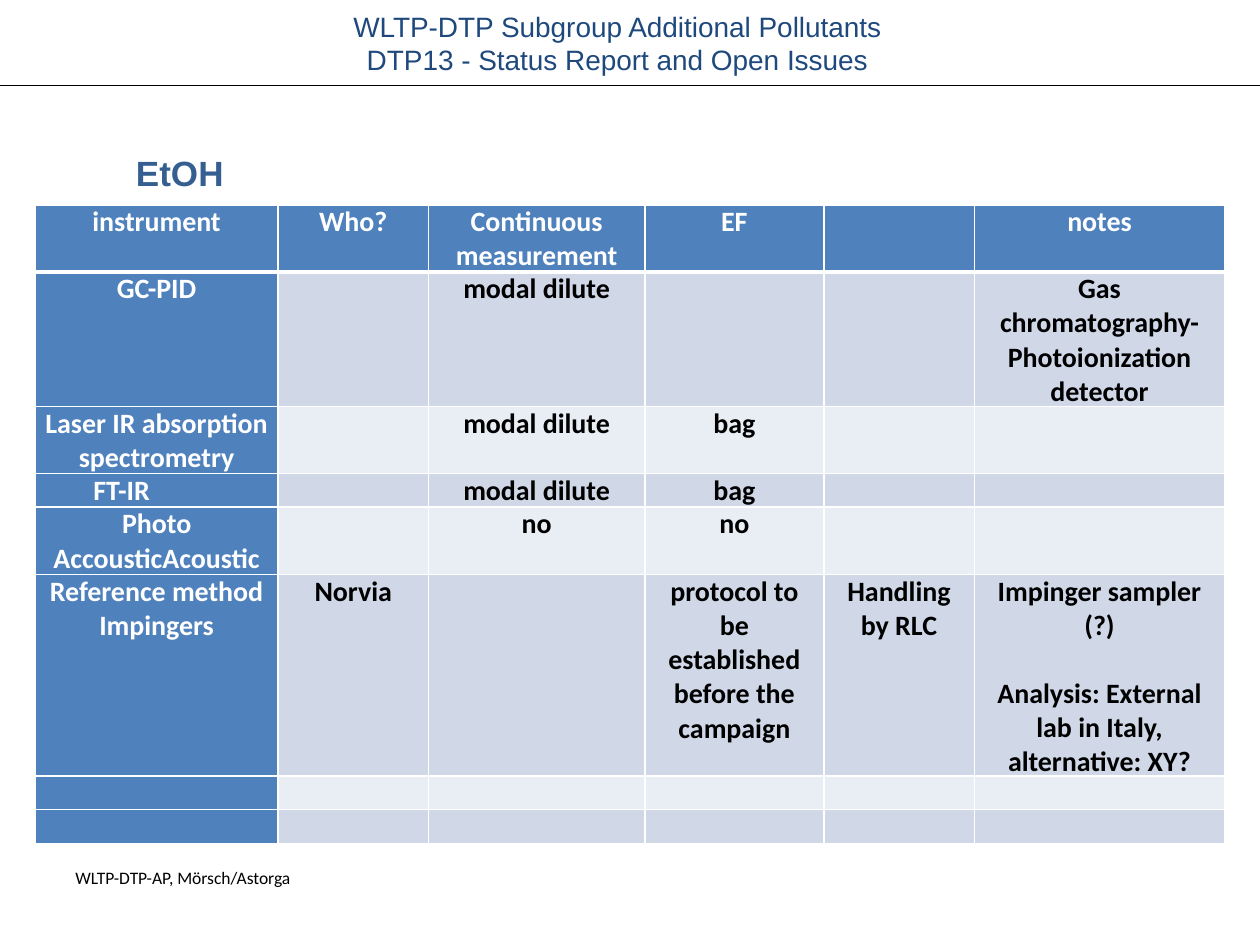
from dataclasses import dataclass

from lxml import etree
from pptx import Presentation
from pptx.dml.color import RGBColor
from pptx.enum.shapes import MSO_CONNECTOR
from pptx.enum.text import MSO_ANCHOR, PP_ALIGN
from pptx.oxml.ns import qn
from pptx.slide import Slide
from pptx.util import Pt

LEFT, CENTER = PP_ALIGN.LEFT, PP_ALIGN.CENTER
TOP, MIDDLE = MSO_ANCHOR.TOP, MSO_ANCHOR.MIDDLE
STRAIGHT = MSO_CONNECTOR.STRAIGHT

COLORS = {
    "black": "000000",
    "white": "FFFFFF",
    "title": "1F497D",
    "heading": "365F91",
    "header": "4F81BD",
    "dark_band": "D0D8E8",
    "light_band": "E9EDF4",
}
COLUMN_WIDTHS = [139, 85.8, 123.8, 102.2, 86, 143.2]
ROW_LINES = [2, 4, 2, 1, 2, 6, 1, 1]
LINE_HEIGHT = 19.2
TAB_SPACE = 40
INSTRUMENTS = [
    ["instrument", "Who?", "Continuous measurement", "EF", "", "notes"],
    ["GC-PID", "", "modal dilute", "", "",
     "Gas chromatography-Photoionization detector"],
    ["Laser IR absorption spectrometry", "", "modal dilute", "bag", "", ""],
    ["FT-IR", "", "modal dilute", "bag", "", ""],
    ["Photo AccousticAcoustic", "", "no", "no", "", ""],
    ["Reference method\nImpingers", "Norvia", "",
     "protocol to be established before the campaign", "Handling by RLC",
     "Impinger sampler (?)\nAnalysis: External lab in Italy, alternative: XY?"],
    [""] * 6,
    [""] * 6,
]


@dataclass
class Report:
    slide: Slide
    body_font: str = "Calibri"
    title_font: str = "Arial"
    body_size: float = 16

    def style(self, paragraph, font, size, color, bold, align):
        paragraph.alignment = align
        paragraph.font.name = font
        paragraph.font.size = Pt(size)
        paragraph.font.bold = bold
        paragraph.font.color.rgb = RGBColor.from_string(COLORS[color])

    def text(self, content, box, font, size, color,
             bold=False, align=LEFT, anchor=TOP):
        frame = self.slide.shapes.add_textbox(*map(Pt, box)).text_frame
        frame.word_wrap = True
        frame.vertical_anchor = anchor
        frame.text = content
        for paragraph in frame.paragraphs:
            self.style(paragraph, font, size, color, bold, align)

    def rule(self, y, width):
        rule = self.slide.shapes.add_connector(STRAIGHT, 0, Pt(y), Pt(width), Pt(y))
        rule.line.width = Pt(0.75)
        rule.line.color.rgb = RGBColor.from_string(COLORS["black"])
        etree.SubElement(rule._element.spPr, qn("a:effectLst"))

    def borders(self, cell, bottom):
        properties = cell._tc.get_or_add_tcPr()
        for index, side in enumerate(("lnL", "lnR", "lnT", "lnB")):
            width = bottom if side == "lnB" else 1
            border = etree.Element(qn(f"a:{side}"), w=str(Pt(width)))
            fill = etree.SubElement(border, qn("a:solidFill"))
            etree.SubElement(fill, qn("a:srgbClr"), val=COLORS["white"])
            properties.insert(index, border)

    def cell(self, cell, content, fill, color, bottom):
        cell.fill.solid()
        cell.fill.fore_color.rgb = RGBColor.from_string(COLORS[fill])
        cell.margin_left = cell.margin_right = Pt(5)
        cell.margin_top = cell.margin_bottom = 0
        cell.text = content
        for paragraph in cell.text_frame.paragraphs:
            self.style(paragraph, self.body_font, self.body_size, color, True, CENTER)
            if not content:
                etree.SubElement(paragraph._p, qn("a:endParaRPr"),
                                 sz=str(int(self.body_size * 100)))
        self.borders(cell, bottom)

    def table(self, rows, left, top):
        heights = [lines * LINE_HEIGHT for lines in ROW_LINES]
        table = self.slide.shapes.add_table(
            len(rows), len(COLUMN_WIDTHS), Pt(left), Pt(top),
            Pt(sum(COLUMN_WIDTHS)), Pt(sum(heights))).table
        table.first_col = True
        for column, width in zip(table.columns, COLUMN_WIDTHS):
            column.width = Pt(width)
        for r, (values, height) in enumerate(zip(rows, heights)):
            table.rows[r].height = Pt(height)
            band = "dark_band" if r % 2 else "light_band"
            for c, value in enumerate(values):
                heading = r == 0 or c == 0
                self.cell(table.cell(r, c), value,
                          "header" if heading else band,
                          "white" if heading else "black",
                          3 if r == 0 else 1)
        return table


def main():
    deck = Presentation()
    deck.slide_width, deck.slide_height = Pt(720), Pt(540)
    report = Report(deck.slides.add_slide(deck.slide_layouts[6]))

    report.text("WLTP-DTP-AP, Mörsch/Astorga", (36, 491.8, 167.8, 37.4),
                report.body_font, 10, "black")
    report.text("WLTP-DTP Subgroup Additional Pollutants\n"
                "DTP13 - Status Report and Open Issues",
                (106.6, 1.4, 492.5, 46.1), report.title_font, 16, "title",
                align=CENTER, anchor=MIDDLE)
    report.rule(49, 720)

    instruments = report.table(INSTRUMENTS, 20, 117)
    instruments.cell(3, 0).margin_right = Pt(5 + TAB_SPACE)
    analysis = instruments.cell(5, 5).text_frame.paragraphs[1]
    analysis.space_before = Pt(LINE_HEIGHT)

    report.text("EtOH", (70.6, 82.8, 113.8, 55.4), report.title_font, 20,
                "heading", bold=True)
    deck.save("out.pptx")


if __name__ == "__main__":
    main()
